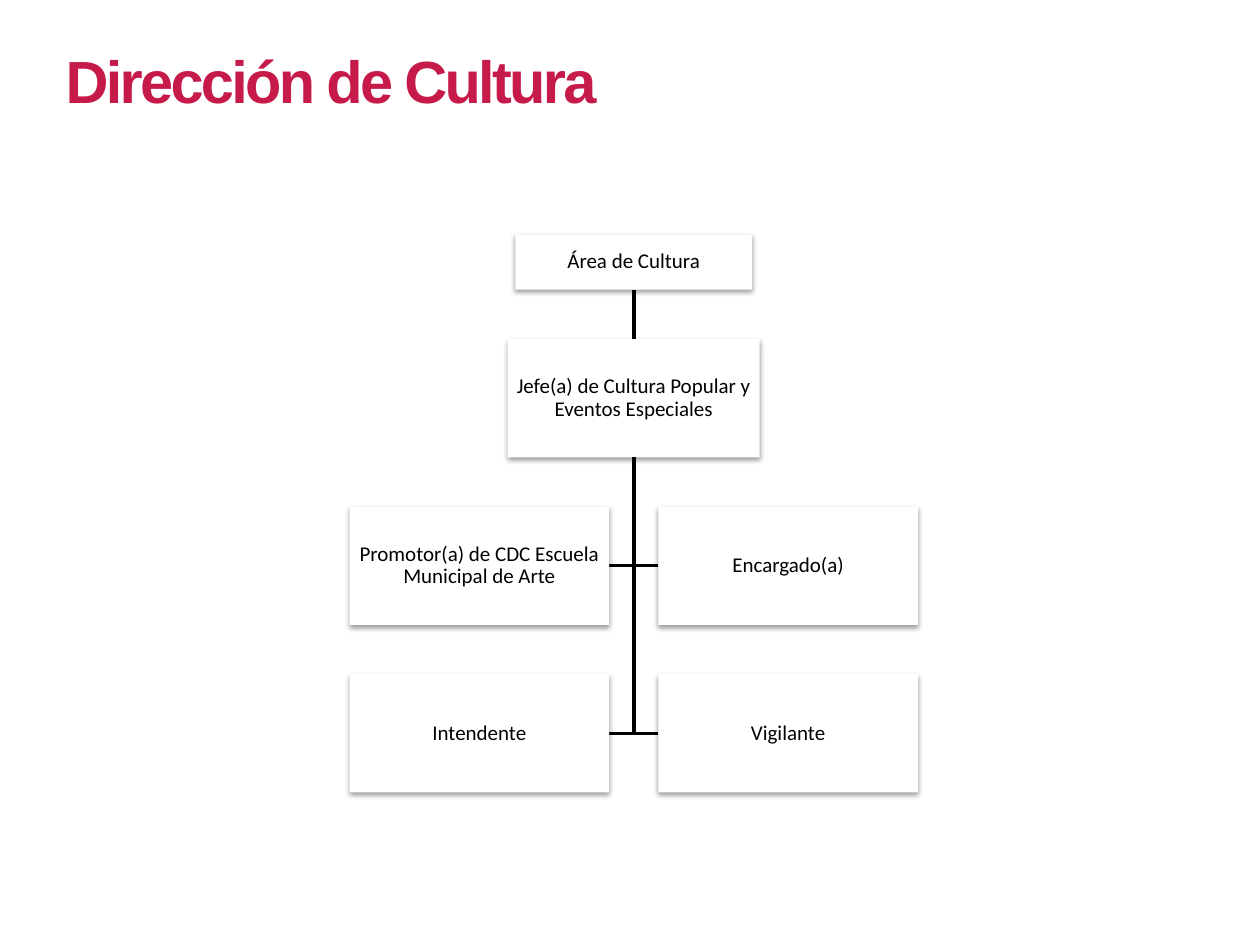
from lxml import etree
from pptx import Presentation
from pptx import util as u
from pptx.dml import color
from pptx.enum import shapes, text
from pptx.oxml import ns

HUES = {"title": "C51A4A", "ink": "000000", "card": "FFFFFF"}
AXIS = 5.03
TALL = 0.94
WIDE = 2.06
GAP = 0.39


def hue(name):
    """Return the named colour."""
    return color.RGBColor.from_string(HUES[name])


def write(shape, words, size=12, font="Calibri", tint="ink", bold=False,
          align=text.PP_ALIGN.CENTER, inset=0.01, lead=0.9, track=0):
    """Put formatted text in the middle of a shape's height."""
    frame = shape.text_frame
    frame.word_wrap = True
    frame.vertical_anchor = text.MSO_ANCHOR.MIDDLE
    for side in ("left", "top", "right", "bottom"):
        setattr(frame, f"margin_{side}", u.Inches(inset))
    para = frame.paragraphs[0]
    para.alignment = align
    para.line_spacing = lead
    run = para.add_run()
    run.text = words
    run.font.size = u.Pt(size)
    run.font.name = font
    run.font.bold = bold
    run.font.color.rgb = hue(tint)
    if track:
        run.font._element.set("spc", str(int(track * 100)))


def shade(shape):
    """Give a shape a soft shadow that falls straight down."""
    shape.shadow.inherit = False
    effects = shape._element.spPr.find(ns.qn("a:effectLst"))
    outer = etree.SubElement(effects, ns.qn("a:outerShdw"), blurRad=str(u.Pt(3.1)),
                             dist=str(u.Pt(1.6)), dir="5400000", rotWithShape="0")
    tone = etree.SubElement(outer, ns.qn("a:srgbClr"), val=HUES["ink"])
    etree.SubElement(tone, ns.qn("a:alpha"), val="38000")


def card(slide, words, mid, top, wide, tall=TALL):
    """Add a white box centred on mid and return it."""
    box = slide.shapes.add_shape(shapes.MSO_SHAPE.RECTANGLE, u.Inches(mid - wide / 2),
                                 u.Inches(top), u.Inches(wide), u.Inches(tall))
    box.fill.solid()
    box.fill.fore_color.rgb = hue("card")
    box.line.fill.background()
    shade(box)
    write(box, words)
    return box


def ink(line):
    """Style a line as a chart link."""
    line.color.rgb = hue("ink")
    line.width = u.Pt(2)


def link(slide, upper, lower):
    """Join two boxes with a straight vertical connector."""
    line = slide.shapes.add_connector(shapes.MSO_CONNECTOR.STRAIGHT, 0, 0, 0, 0)
    line.begin_connect(upper, 2)
    line.end_connect(lower, 0)
    ink(line.line)
    etree.SubElement(line._element.spPr, ns.qn("a:effectLst"))


def elbow(slide, top, end, row):
    """Draw a link down the axis and out to the side of a box."""
    pen = slide.shapes.build_freeform(u.Inches(AXIS), u.Inches(top))
    pen.add_line_segments([(u.Inches(AXIS), u.Inches(row)),
                           (u.Inches(end), u.Inches(row))], close=False)
    shape = pen.convert_to_shape()
    shape.fill.background()
    shape.shadow.inherit = False
    ink(shape.line)


def head(slide, words):
    """Place the slide title."""
    title = slide.shapes.title
    title.left, title.top, title.width, title.height = map(u.Inches, (0.42, 0.29, 6.81, 0.69))
    write(title, words, size=34, font="Arial", tint="title", bold=True,
          align=text.PP_ALIGN.LEFT, inset=0.1, lead=1, track=-1.5)


def main():
    """Build the organisation chart slide."""
    deck = Presentation()
    deck.slide_width, deck.slide_height = u.Inches(10), u.Inches(7.5)
    slide = deck.slides.add_slide(deck.slide_layouts[5])
    head(slide, "Dirección de Cultura")
    area = card(slide, "Área de Cultura", AXIS, 1.86, 1.88, 0.44)
    chief = card(slide, "Jefe(a) de Cultura Popular y Eventos Especiales", AXIS, 2.69, 2)
    link(slide, area, chief)
    staff = [("Promotor(a) de CDC Escuela Municipal de Arte", "Encargado(a)"),
             ("Intendente", "Vigilante")]
    base = 2.69 + TALL
    for row, pair in enumerate(staff):
        top = base + GAP + row * (TALL + GAP)
        for side, words in zip((-1, 1), pair):
            edge = AXIS + side * GAP / 2
            elbow(slide, base, edge, top + TALL / 2)
            card(slide, words, edge + side * WIDE / 2, top, WIDE)
    deck.save("out.pptx")


if __name__ == "__main__":
    main()
